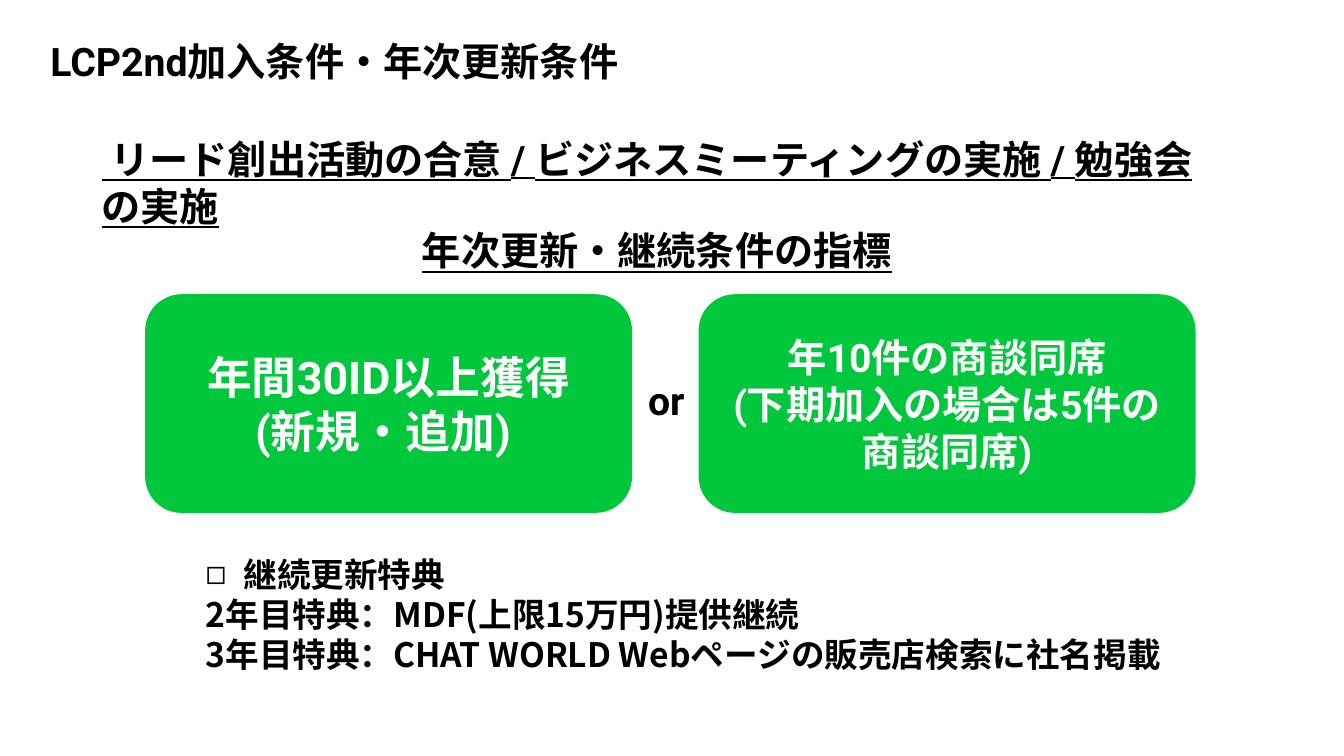
"""Builds the slide on joining and yearly renewal conditions."""
from lxml.etree import SubElement
from pptx import Presentation
from pptx.dml.color import RGBColor
from pptx.enum.shapes import MSO_SHAPE as Shape
from pptx.enum.text import MSO_ANCHOR as Anchor, MSO_AUTO_SIZE as AutoSize, PP_ALIGN as Align
from pptx.oxml.ns import qn
from pptx.util import Pt

BLACK = RGBColor(0x00, 0x00, 0x00)
WHITE = RGBColor(0xFF, 0xFF, 0xFF)
GREEN = RGBColor(0x00, 0xC7, 0x3C)


class ConditionsSlide:
    latin = "Roboto"
    asian = "Noto Sans CJK JP"

    def __init__(self, deck):
        self.slide = deck.slides.add_slide(deck.slide_layouts[1])

    def set_text(self, shape, lines, size, color=BLACK, align=Align.LEFT,
                 anchor=Anchor.TOP, underline=False, latin=latin):
        frame = shape.text_frame
        frame.word_wrap = True
        frame.auto_size = AutoSize.NONE
        frame.vertical_anchor = anchor
        frame.text = "\n".join(lines)
        for paragraph in frame.paragraphs:
            paragraph.alignment = align
            paragraph.space_before = Pt(0)
            font = paragraph.font
            font.size, font.bold, font.underline = Pt(size), True, underline
            font.color.rgb = color
            font.name = latin
            SubElement(font._element, qn("a:ea"), typeface=self.asian)

    def place(self, shape, box):
        shape.left, shape.top, shape.width, shape.height = map(Pt, box)

    def title(self, box, text):
        heading = self.slide.shapes.title
        self.place(heading, box)
        self.set_text(heading, [text], 28, anchor=Anchor.MIDDLE)
        heading.text_frame.paragraphs[0].line_spacing = 0.9

    def label(self, box, text, **style):
        self.set_text(self.slide.shapes.add_textbox(*map(Pt, box)), [text], 28, **style)

    def card(self, box, lines, size):
        card = self.slide.shapes.add_shape(Shape.ROUNDED_RECTANGLE, *map(Pt, box))
        card.shadow.inherit = False
        card.fill.solid()
        card.fill.fore_color.rgb = GREEN
        card.line.fill.background()
        self.set_text(card, lines, size, WHITE, Align.CENTER, Anchor.MIDDLE)

    def benefits(self, box, heading, items):
        body = self.slide.placeholders[1]
        self.place(body, box)
        self.set_text(body, [heading, *items], 24, latin=self.asian)
        for index, paragraph in enumerate(body.text_frame.paragraphs):
            props = paragraph._p.get_or_add_pPr()
            indent = Pt(27) if index == 0 else 0
            props.set("marL", str(indent))
            props.set("indent", str(-indent))
            tag, attributes = ("a:buChar", {"char": "◻"}) if index == 0 else ("a:buNone", {})
            bullet = props.makeelement(qn(tag), attributes)
            paragraph.font._element.addprevious(bullet)


def main():
    deck = Presentation()
    deck.slide_width, deck.slide_height = Pt(960), Pt(540)
    page = ConditionsSlide(deck)
    page.title((28.8, 29.5, 868.3, 32.4), "LCP2nd加入条件・年次更新条件")
    page.label((65.5, 92.9, 815.8, 41),
               " リード創出活動の合意 / ビジネスミーティングの実施 / 勉強会の実施", underline=True)
    page.card((103.7, 210.2, 347.8, 156.2), ["年間30ID以上獲得", "(新規・追加) "], 32)
    page.card((499, 210.2, 355, 156.2),
              ["年10件の商談同席", "(下期加入の場合は5件の商談同席)"], 28)
    page.label((132.5, 158.4, 673.2, 41), "年次更新・継続条件の指標",
               align=Align.CENTER, underline=True)
    page.label((446.4, 265, 59, 41), "or", align=Align.CENTER)
    page.benefits((139.7, 391.7, 760.3, 94.3), "継続更新特典",
                  ["2年目特典：MDF(上限15万円)提供継続",
                   "3年目特典：CHAT WORLD Webページの販売店検索に社名掲載"])
    deck.save("out.pptx")


if __name__ == "__main__":
    main()
